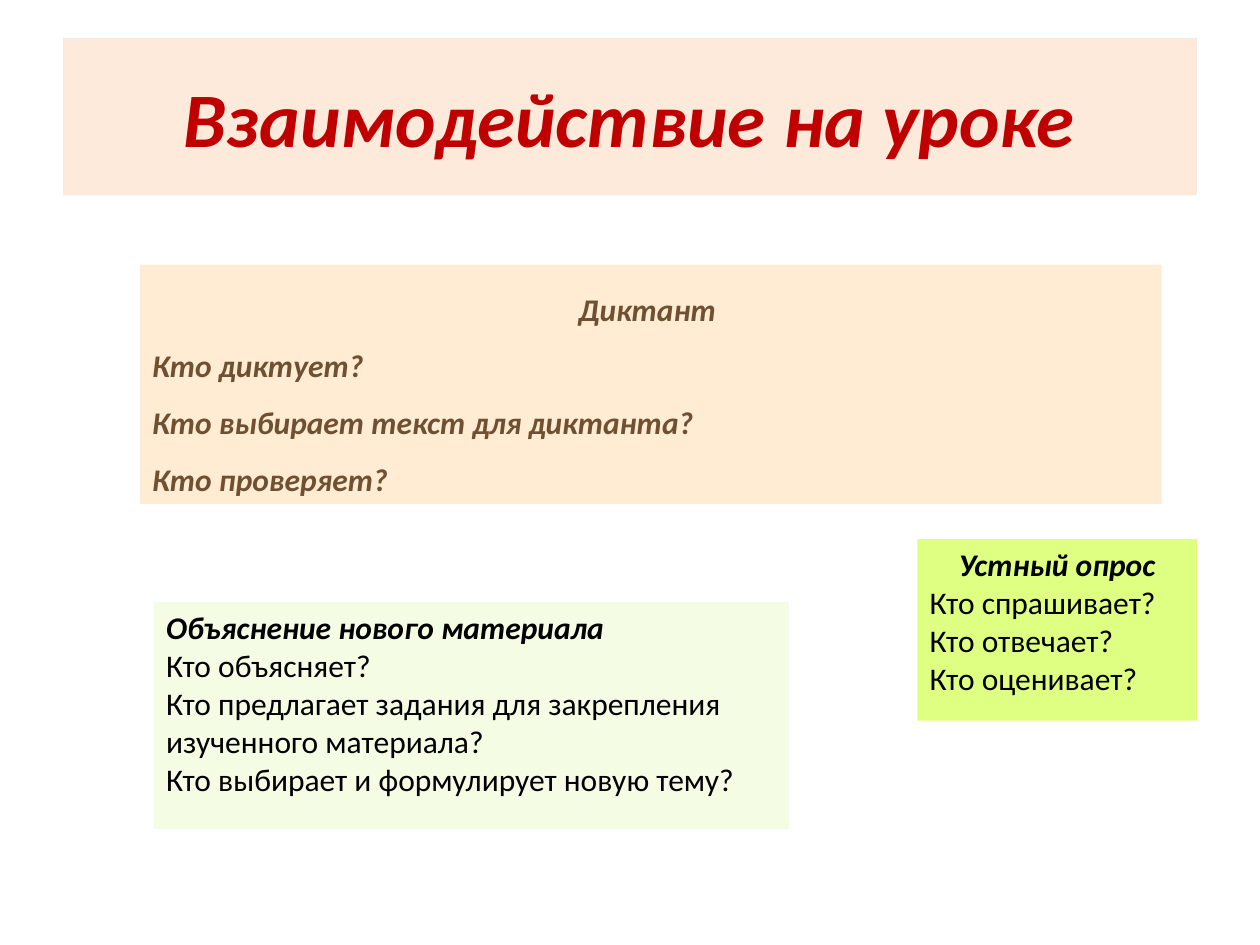
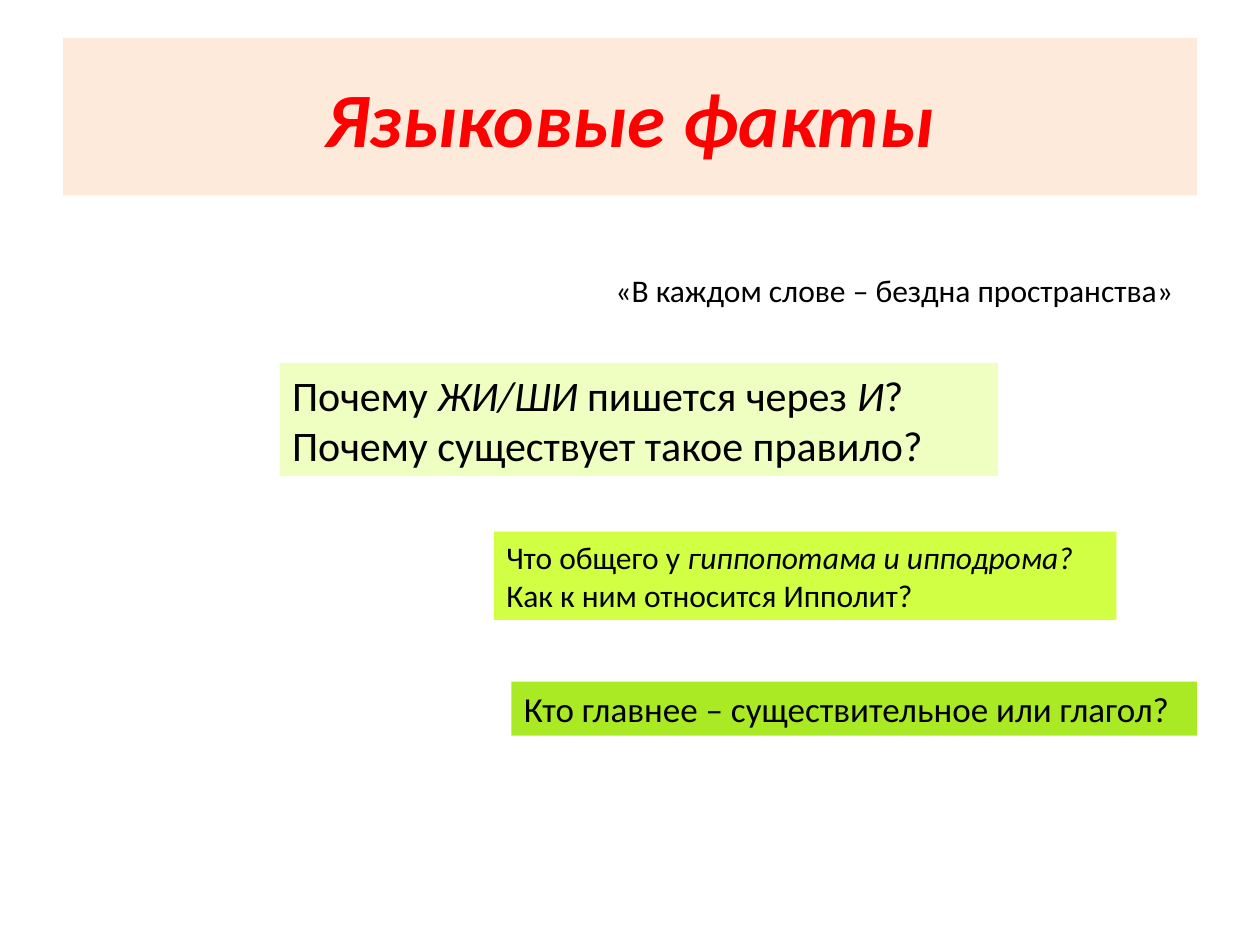
from pptx import Presentation
from pptx.dml.color import RGBColor
from pptx.enum.text import MSO_ANCHOR, MSO_AUTO_SIZE, PP_ALIGN
from pptx.util import Inches, Pt

LEFT, CENTER, RIGHT = PP_ALIGN.LEFT, PP_ALIGN.CENTER, PP_ALIGN.RIGHT
TOP, MIDDLE = MSO_ANCHOR.TOP, MSO_ANCHOR.MIDDLE

FONT = "Calibri"
TITLE_ONLY = 5
TITLE_AREA = (0.5, 0.3, 9, 1.25)
COLORS = {
    "band": "FDEADA", "dark red": "C00000", "red": "FF0000",
    "black": "000000", "brown": "705032", "peach": "FFECD3",
    "lime": "DFFF82", "mint": "F4FCE4", "pale lime": "EFFFC1",
    "bright lime": "D0FF44", "green": "AAEA25",
}

# A line is (alignment, runs); a run is (text, style), with style "", "i" or "bi".
SLIDES = [
    {
        "title": "Взаимодействие на уроке", "title_color": "dark red",
        "cards": [
            {"area": (1.11, 2.1, 8.11, 1.9), "fill": "peach", "color": "brown",
             "spacing": 1.5, "lines": [
                 (CENTER, [("Диктант ", "bi")]),
                 (LEFT, [("Кто диктует?", "bi")]),
                 (LEFT, [("Кто выбирает текст для диктанта?", "bi")]),
                 (LEFT, [("Кто проверяет?", "bi")])]},
            {"area": (7.28, 4.28, 2.22, 1.44), "fill": "lime", "lines": [
                (CENTER, [("Устный опрос", "bi")]),
                (LEFT, [("Кто спрашивает?", "")]),
                (LEFT, [("Кто отвечает?", "")]),
                (LEFT, [("Кто оценивает?", "")])]},
            {"area": (1.22, 4.78, 5.04, 1.8), "fill": "mint", "lines": [
                (LEFT, [("Объяснение нового материала", "bi")]),
                (LEFT, [("Кто объясняет?", "")]),
                (LEFT, [("Кто предлагает задания для закрепления", "")]),
                (LEFT, [("изученного материала?", "")]),
                (LEFT, [("Кто выбирает и формулирует новую тему?", "")])]},
        ],
    },
    {
        "title": "Языковые факты", "title_color": "red",
        "cards": [
            {"area": (4.76, 2.1, 4.65, 0.4), "lines": [
                (RIGHT, [("«В каждом слове – бездна пространства»", "")])]},
            {"area": (2.22, 2.88, 5.7, 0.9), "fill": "pale lime", "size": 24, "lines": [
                (LEFT, [("Почему ", ""), ("ЖИ/ШИ", "i"), (" пишется через ", ""),
                        ("И", "i"), ("?", "")]),
                (LEFT, [("Почему существует такое правило?", "")])]},
            {"area": (3.92, 4.22, 4.94, 0.7), "fill": "bright lime", "lines": [
                (LEFT, [("Что общего у ", ""), ("гиппопотама и ипподрома?", "i")]),
                (LEFT, [("Как к ним относится Ипполит?", "")])]},
            {"area": (4.06, 5.41, 5.44, 0.43), "fill": "green", "size": 20, "lines": [
                (LEFT, [("Кто главнее – существительное или глагол?", "")])]},
        ],
    },
]


def rgb(name):
    return RGBColor.from_string(COLORS[name])


def paint(shape, fill):
    shape.fill.solid()
    shape.fill.fore_color.rgb = rgb(fill)


def write(frame, lines, size, color, anchor=TOP, spacing=1.0):
    frame.word_wrap = True
    frame.auto_size = MSO_AUTO_SIZE.NONE
    frame.vertical_anchor = anchor
    for number, (alignment, runs) in enumerate(lines):
        paragraph = frame.add_paragraph() if number else frame.paragraphs[0]
        paragraph.alignment = alignment
        paragraph.line_spacing = spacing
        for text, style in runs:
            run = paragraph.add_run()
            run.text = text
            font = run.font
            font.name, font.size = FONT, Pt(size)
            font.bold, font.italic = "b" in style, "i" in style
            font.color.rgb = rgb(color)


def add_title(slide, text, color):
    title = slide.shapes.title
    title.left, title.top, title.width, title.height = map(Inches, TITLE_AREA)
    paint(title, "band")
    write(title.text_frame, [(CENTER, [(text, "bi")])], 44, color, MIDDLE)


def add_card(slide, area, lines, fill=None, size=18, color="black", spacing=1.0):
    card = slide.shapes.add_textbox(*map(Inches, area))
    if fill:
        paint(card, fill)
    write(card.text_frame, lines, size, color, spacing=spacing)


def main():
    deck = Presentation()
    deck.slide_width, deck.slide_height = Inches(10), Inches(7.5)
    for content in SLIDES:
        slide = deck.slides.add_slide(deck.slide_layouts[TITLE_ONLY])
        add_title(slide, content["title"], content["title_color"])
        for card in content["cards"]:
            add_card(slide, **card)
    deck.save("out.pptx")


if __name__ == "__main__":
    main()
